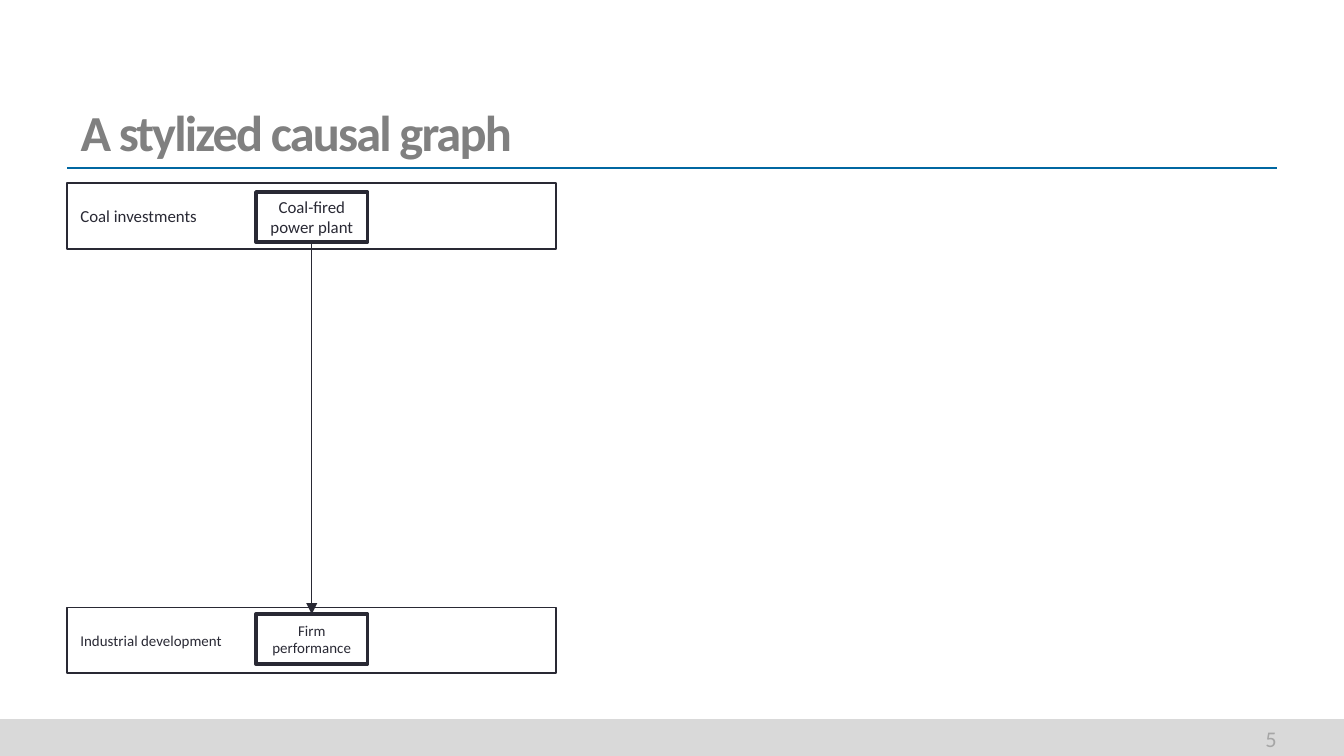
from dataclasses import dataclass

from lxml.etree import SubElement
from pptx import Presentation
from pptx.dml.color import RGBColor as Rgb
from pptx.enum.shapes import MSO_CONNECTOR as Conn, MSO_SHAPE as Kind
from pptx.enum.text import MSO_ANCHOR as Anchor, MSO_AUTO_SIZE as Fit, PP_ALIGN as Align
from pptx.oxml.ns import qn
from pptx.shapes.autoshape import Shape
from pptx.shapes.connector import Connector
from pptx.slide import Slide
from pptx.util import Inches, Pt


@dataclass(frozen=True)
class Theme:
    font: str = "Calibri"
    ink: str = "292934"
    title: str = "808080"
    rule: str = "0067A1"
    foot: str = "D9D9D9"
    page: str = "A6A6A6"
    title_size: int = 27
    page_size: int = 12
    thin: float = 1
    bold: float = 2.08
    arrow: float = 0.75


@dataclass(frozen=True)
class Stage:
    label: str
    node: str
    top: float
    node_top: float
    size: int


THEME = Theme()
WIDE = 10
HIGH = WIDE * 9 / 16
EDGE = 0.5
BAND_W, BAND_H = 3.64, 0.49
NODE_W, NODE_H = 0.83, 0.37
MID = EDGE + BAND_W / 2
FOOT = 5.35
RULE = 1.25
STAGES = [
    Stage("Coal investments", "Coal-fired power plant", 1.36, 1.43, 9),
    Stage("Industrial development", "Firm performance", 4.52, 4.57, 8),
]


def write(shape: Shape, text: str, size: int, color: str, align: Align) -> None:
    frame = shape.text_frame
    frame.text = text
    frame.word_wrap = True
    frame.auto_size = Fit.NONE
    frame.vertical_anchor = Anchor.MIDDLE
    para = frame.paragraphs[0]
    para.alignment = align
    font = para.runs[0].font
    font.name = THEME.font
    font.size = Pt(size)
    font.color.rgb = Rgb.from_string(color)


def add_box(slide: Slide, left: float, top: float, width: float, height: float) -> Shape:
    box = slide.shapes.add_shape(
        Kind.RECTANGLE, Inches(left), Inches(top), Inches(width), Inches(height)
    )
    box.shadow.inherit = False
    return box


def add_frame(slide: Slide, left: float, top: float, width: float, height: float,
              weight: float, text: str, size: int, align: Align) -> None:
    box = add_box(slide, left, top, width, height)
    box.fill.background()
    box.line.color.rgb = Rgb.from_string(THEME.ink)
    box.line.width = Pt(weight)
    write(box, text, size, THEME.ink, align)


def add_line(slide: Slide, x1: float, y1: float, x2: float, y2: float,
             color: str, weight: float) -> Connector:
    line = slide.shapes.add_connector(
        Conn.STRAIGHT, Inches(x1), Inches(y1), Inches(x2), Inches(y2)
    )
    line.line.color.rgb = Rgb.from_string(color)
    line.line.width = Pt(weight)
    SubElement(line._element.spPr, qn("a:effectLst"))
    return line


def add_arrow(slide: Slide, start: Stage, end: Stage) -> None:
    line = add_line(slide, MID, start.node_top + NODE_H, MID, end.node_top,
                    THEME.ink, THEME.arrow)
    SubElement(line.line._get_or_add_ln(), qn("a:tailEnd"), type="triangle")


def add_title(slide: Slide, text: str) -> None:
    title = slide.shapes.title
    title.left, title.top = Inches(EDGE), Inches(0.44)
    title.width, title.height = Inches(WIDE - 2 * EDGE), Inches(0.81)
    write(title, text, THEME.title_size, THEME.title, Align.LEFT)
    title.text_frame.vertical_anchor = Anchor.BOTTOM
    font = title.text_frame.paragraphs[0].runs[0].font
    font.bold = True
    font._element.set("spc", "-100")


def add_foot(slide: Slide, number: str) -> None:
    bar = add_box(slide, 0, FOOT, WIDE, HIGH - FOOT)
    bar.fill.solid()
    bar.fill.fore_color.rgb = Rgb.from_string(THEME.foot)
    bar.line.fill.background()
    page = slide.shapes.add_textbox(Inches(8.33), Inches(5.36), Inches(1.17), Inches(0.27))
    write(page, number, THEME.page_size, THEME.page, Align.RIGHT)
    page.text_frame.margin_right = 0


def main() -> None:
    deck = Presentation()
    deck.slide_width, deck.slide_height = Inches(WIDE), Inches(HIGH)
    slide = deck.slides.add_slide(deck.slide_layouts[5])
    add_foot(slide, "5")
    add_line(slide, EDGE, RULE, WIDE - EDGE, RULE, THEME.rule, THEME.thin)
    add_title(slide, "A stylized causal graph")
    for stage in STAGES:
        add_frame(slide, MID - NODE_W / 2, stage.node_top, NODE_W, NODE_H,
                  THEME.bold, stage.node, stage.size, Align.CENTER)
        add_frame(slide, EDGE, stage.top, BAND_W, BAND_H,
                  THEME.thin, stage.label, stage.size, Align.LEFT)
    add_arrow(slide, *STAGES)
    deck.save("out.pptx")


if __name__ == "__main__":
    main()
